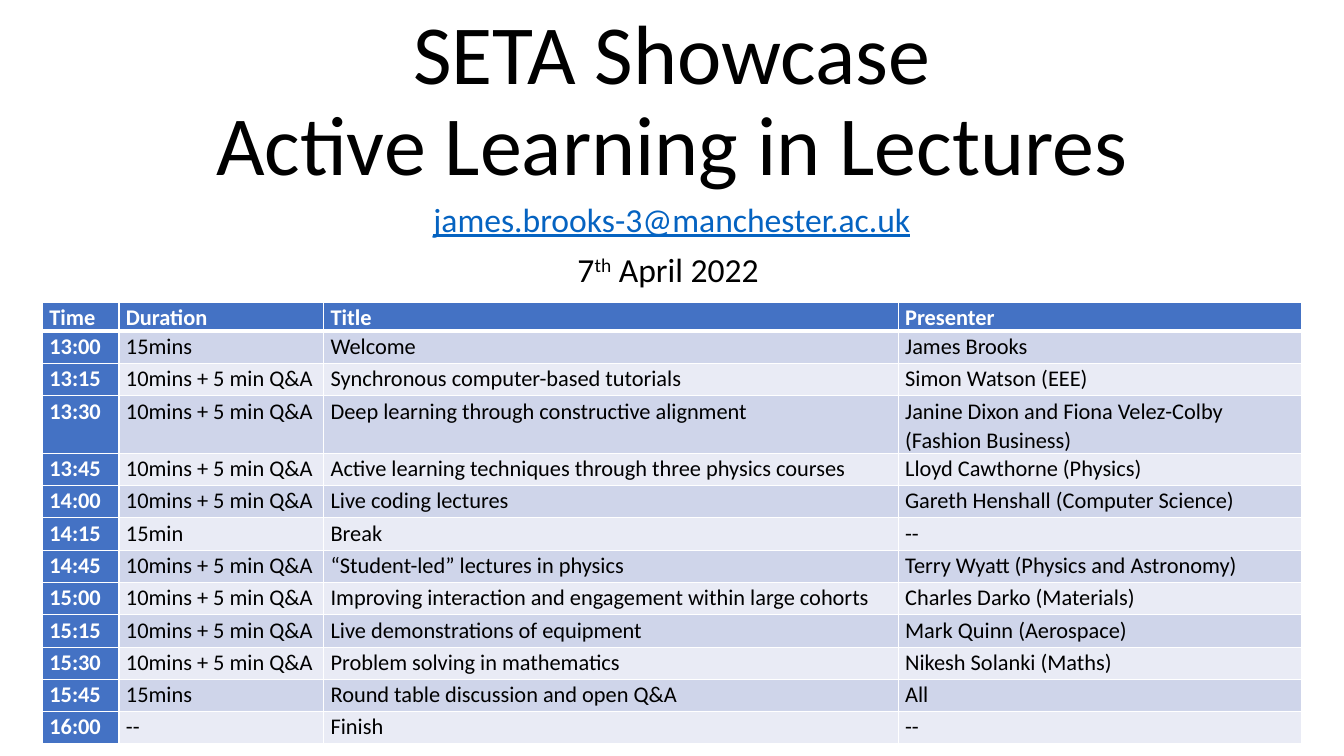
from typing import NamedTuple, Optional

import lxml.etree
import pptx
import pptx.dml.color
import pptx.enum.text
import pptx.oxml.ns
import pptx.util

Pt = pptx.util.Pt
RGBColor = pptx.dml.color.RGBColor
Anchor = pptx.enum.text.MSO_ANCHOR

FONT = "Calibri"
BLACK = RGBColor(0x00, 0x00, 0x00)
WHITE = RGBColor(0xFF, 0xFF, 0xFF)
LINK_BLUE = RGBColor(0x05, 0x63, 0xC1)
HEADER_BLUE = RGBColor(0x44, 0x72, 0xC4)
BANDS = (RGBColor(0xCF, 0xD5, 0xEA), RGBColor(0xE9, 0xEB, 0xF5))


class Heading(NamedTuple):
    """One paragraph of the heading, with an optional superscript part."""
    text: str
    size: float
    color: RGBColor = BLACK
    underline: bool = False
    space_before: float = 0
    superscript: str = ""
    ending: str = ""


class Session(NamedTuple):
    time: str
    duration: str
    title: str
    presenter: str
    height: float = 23.1


TALK = "10mins + 5 min Q&A"
COLUMN_WIDTHS = (54.7, 146.2, 410.4, 288)
PROGRAMME = (
    Session("Time", "Duration", "Title", "Presenter", 11.5),
    Session("13:00", "15mins", "Welcome", "James Brooks"),
    Session("13:15", TALK, "Synchronous computer-based tutorials", "Simon Watson (EEE)"),
    Session("13:30", TALK, "Deep learning through constructive alignment",
            "Janine Dixon and Fiona Velez-Colby (Fashion Business)", 34.6),
    Session("13:45", TALK, "Active learning techniques through three physics courses",
            "Lloyd Cawthorne (Physics)"),
    Session("14:00", TALK, "Live coding lectures", "Gareth Henshall (Computer Science)"),
    Session("14:15", "15min", "Break", "--"),
    Session("14:45", TALK, "“Student-led” lectures in physics",
            "Terry Wyatt (Physics and Astronomy)"),
    Session("15:00", TALK, "Improving interaction and engagement within large cohorts",
            "Charles Darko (Materials)"),
    Session("15:15", TALK, "Live demonstrations of equipment", "Mark Quinn (Aerospace)"),
    Session("15:30", TALK, "Problem solving in mathematics", "Nikesh Solanki (Maths)"),
    Session("15:45", "15mins", "Round table discussion and open Q&A", "All"),
    Session("16:00", "--", "Finish", "--"),
)


def set_font(paragraph, size: float, color: RGBColor, bold: bool = False,
             underline: Optional[bool] = None) -> None:
    font = paragraph.font
    font.name, font.size, font.bold, font.underline = FONT, Pt(size), bold, underline
    font.color.rgb = color


def add_headings(slide, top: float, height: float, anchor, headings: tuple) -> None:
    """Add a centred text box with one paragraph per heading."""
    frame = slide.shapes.add_textbox(Pt(120), Pt(top), Pt(720), Pt(height)).text_frame
    frame.word_wrap = True
    frame.vertical_anchor = anchor
    for index, heading in enumerate(headings):
        paragraph = frame.add_paragraph() if index else frame.paragraphs[0]
        paragraph.text = heading.text
        paragraph.alignment = pptx.enum.text.PP_ALIGN.CENTER
        paragraph.line_spacing = 0.9
        paragraph.space_before = Pt(heading.space_before)
        set_font(paragraph, heading.size, heading.color, underline=heading.underline)
        if heading.superscript:
            raised = paragraph.add_run()
            raised.text = heading.superscript
            raised.font._element.set("baseline", "30000")
            paragraph.add_run().text = heading.ending


def set_borders(cell, bottom_width: float) -> None:
    """Draw white cell borders; they must precede the fill in the XML."""
    properties = cell._tc.get_or_add_tcPr()
    widths = {"lnL": 1, "lnR": 1, "lnT": 1, "lnB": bottom_width}
    for position, (side, width) in enumerate(widths.items()):
        line = lxml.etree.Element(pptx.oxml.ns.qn(f"a:{side}"), w=str(Pt(width)))
        fill = lxml.etree.SubElement(line, pptx.oxml.ns.qn("a:solidFill"))
        lxml.etree.SubElement(fill, pptx.oxml.ns.qn("a:srgbClr"), val=str(WHITE))
        properties.insert(position, line)


def fill_cell(cell, text: str, band: RGBColor, emphasised: bool, bottom_width: float) -> None:
    cell.margin_left = cell.margin_right = Pt(5)
    cell.margin_top = cell.margin_bottom = Pt(0)
    cell.fill.solid()
    cell.fill.fore_color.rgb = HEADER_BLUE if emphasised else band
    paragraph = cell.text_frame.paragraphs[0]
    paragraph.text = text
    paragraph.line_spacing = 1.07
    paragraph.space_after = Pt(8)
    set_font(paragraph, 16, WHITE if emphasised else BLACK, bold=emphasised)
    set_borders(cell, bottom_width)


def add_programme(slide) -> None:
    table = slide.shapes.add_table(
        len(PROGRAMME), len(COLUMN_WIDTHS), Pt(30.3), Pt(216),
        Pt(sum(COLUMN_WIDTHS)), Pt(sum(session.height for session in PROGRAMME))).table
    for column, width in zip(table.columns, COLUMN_WIDTHS):
        column.width = Pt(width)
    for row, session in enumerate(PROGRAMME):
        table.rows[row].height = Pt(session.height)
        for column, text in enumerate(session[:len(COLUMN_WIDTHS)]):
            fill_cell(table.cell(row, column), text, BANDS[(row + 1) % 2],
                      emphasised=row == 0 or column == 0,
                      bottom_width=3 if row == 0 else 1)


def main() -> None:
    presentation = pptx.Presentation()
    presentation.slide_width, presentation.slide_height = Pt(960), Pt(540)
    slide = presentation.slides.add_slide(presentation.slide_layouts[6])

    # Title, contact and date
    add_headings(slide, 0, 141.8, Anchor.BOTTOM,
                 (Heading("SETA Showcase\nActive Learning in Lectures", 60),))
    add_headings(slide, 141.8, 74.2, Anchor.TOP, (
        Heading("james.brooks-3@manchester.ac.uk", 24, LINK_BLUE, True, 10),
        Heading("7", 24, space_before=10, superscript="th", ending=" April 2022 "),
    ))

    # Programme of the afternoon
    add_programme(slide)
    presentation.save("out.pptx")


if __name__ == "__main__":
    main()
